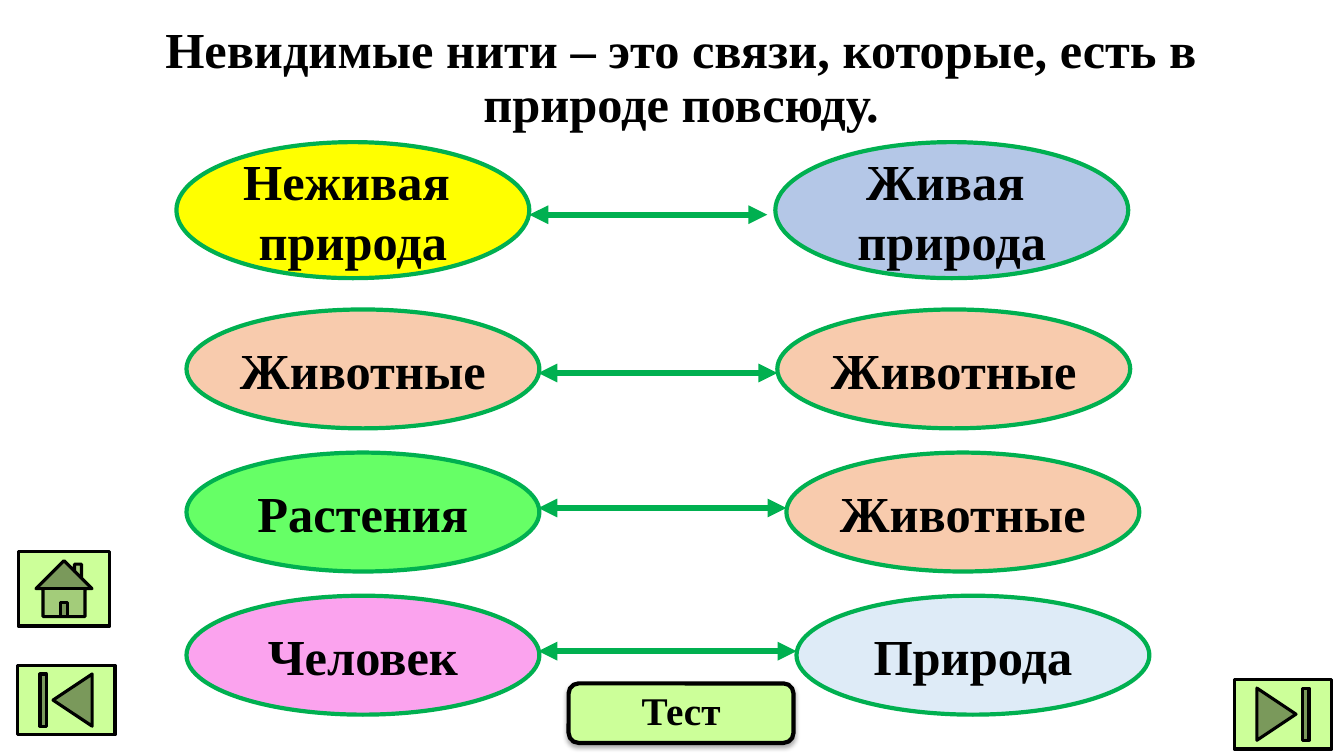
from lxml.etree import SubElement
from pptx import Presentation
from pptx.dml.color import RGBColor
from pptx.enum.shapes import MSO_CONNECTOR, MSO_SHAPE as Form
from pptx.enum.text import MSO_ANCHOR, PP_ALIGN
from pptx.oxml.ns import qn
from pptx.util import Inches, Pt

COLOURS = {
    "text": "000000", "outline": "00B050", "button": "CCFF99", "lifeless": "FFFF00",
    "living": "B4C7E7", "animal": "F8CBAD", "plant": "66FF66", "human": "FBA3EE",
    "nature": "DEEBF7",
}
TEXT_FORMAT = {"name": "Times New Roman", "bold": True}
OVAL_WIDTH = 3.5
ROWS = [
    (1.41, 1.35, 2.13, (1.75, "lifeless", ["Неживая ", "природа"]),
     (7.69, "living", ["Живая ", "природа"]), (5.25, 7.61)),
    (3.07, 1.18, 3.7, (1.85, "animal", ["Животные"]),
     (7.71, "animal", ["Животные"]), (5.34, 7.71)),
    (4.49, 1.18, 5.04, (1.85, "plant", ["Растения"]),
     (7.8, "animal", ["Животные"]), (5.34, 7.8)),
    (5.91, 1.18, 6.46, (1.85, "human", ["Человек"]),
     (7.9, "nature", ["Природа"]), (5.34, 7.9)),
]
BUTTONS = [
    (Form.ACTION_BUTTON_END, (12.24, 6.74, 0.97, 0.69), 0),
    (Form.ACTION_BUTTON_END, (0.17, 6.6, 0.97, 0.69), 180),
    (Form.ACTION_BUTTON_HOME, (0.18, 5.47, 0.91, 0.74), 0),
]


def colour(name):
    """Return the named colour."""
    return RGBColor.from_string(COLOURS[name])


def write(frame, lines, size, spacing=None):
    """Fill a text frame with centred bold paragraphs."""
    frame.vertical_anchor = MSO_ANCHOR.MIDDLE
    for index, line in enumerate(lines):
        para = frame.add_paragraph() if index else frame.paragraphs[0]
        para.alignment = PP_ALIGN.CENTER
        if spacing:
            para.line_spacing = spacing
        span = para.add_run()
        span.text = line
        for key, value in {**TEXT_FORMAT, "size": Pt(size)}.items():
            setattr(span.font, key, value)
        span.font.color.rgb = colour("text")


def set_insets(frame):
    """Set the wider margins of the title and the test button."""
    margins = {"left": 0.12, "right": 0.12, "top": 0.06, "bottom": 0.06}
    for side, value in margins.items():
        setattr(frame, f"margin_{side}", Inches(value))


def add_form(page, form, place, fill, line, width):
    """Add a filled and outlined preset shape."""
    shape = page.shapes.add_shape(form, *map(Inches, place))
    shape.shadow.inherit = False
    shape.fill.solid()
    shape.fill.fore_color.rgb = colour(fill)
    shape.line.color.rgb = colour(line)
    shape.line.width = Pt(width)
    return shape


def add_oval(page, top, height, left, fill, lines):
    """Add a labelled oval."""
    place = (left, top, OVAL_WIDTH, height)
    oval = add_form(page, Form.OVAL, place, fill, "outline", 3)
    oval.text_frame.word_wrap = False
    write(oval.text_frame, lines, 36)


def add_arrow(page, start, end, height):
    """Add a horizontal arrow with a head at each end."""
    ends = map(Inches, (start, height, end, height))
    arrow = page.shapes.add_connector(MSO_CONNECTOR.STRAIGHT, *ends)
    arrow.line.color.rgb = colour("outline")
    arrow.line.width = Pt(4.5)
    outline = arrow.line._get_or_add_ln()
    for tag in ("a:headEnd", "a:tailEnd"):
        SubElement(outline, qn(tag), type="triangle")
    SubElement(arrow._element.spPr, qn("a:effectLst"))


def add_test_button(page):
    """Add the test button with a soft shadow below it."""
    place = (5.64, 6.78, 2.23, 0.59)
    button = add_form(page, Form.FLOWCHART_ALTERNATE_PROCESS, place, "button", "text", 3)
    effects = button._element.spPr.find(qn("a:effectLst"))
    shadow = SubElement(effects, qn("a:outerShdw"), blurRad=str(Pt(3.5)),
                        dist=str(Pt(2.2)), dir="5400000", rotWithShape="0")
    tint = SubElement(shadow, qn("a:srgbClr"), val=COLOURS["text"])
    SubElement(tint, qn("a:alpha"), val="32000")
    set_insets(button.text_frame)
    write(button.text_frame, ["Тест"], 28, 0.9)


def add_title(page):
    """Place and write the title."""
    title = page.shapes.title
    place = {"left": 1.27, "top": 0.16, "width": 10.97, "height": 1.25}
    for key, value in place.items():
        setattr(title, key, Inches(value))
    set_insets(title.text_frame)
    title.text_frame.word_wrap = True
    write(title.text_frame,
          ["Невидимые нити – это связи, которые, есть в природе повсюду."], 36, 0.9)


def main():
    """Build and save the slide."""
    deck = Presentation()
    deck.slide_width, deck.slide_height = Inches(13.33), Inches(7.5)
    page = deck.slides.add_slide(deck.slide_layouts[5])
    add_title(page)
    for top, height, arrow_height, left_oval, right_oval, ends in ROWS:
        for oval in (left_oval, right_oval):
            add_oval(page, top, height, *oval)
        add_arrow(page, *ends, arrow_height)
    for form, place, rotation in BUTTONS:
        button = add_form(page, form, place, "button", "text", 2.25)
        button.rotation = rotation
    add_test_button(page)
    deck.save("out.pptx")


if __name__ == "__main__":
    main()
